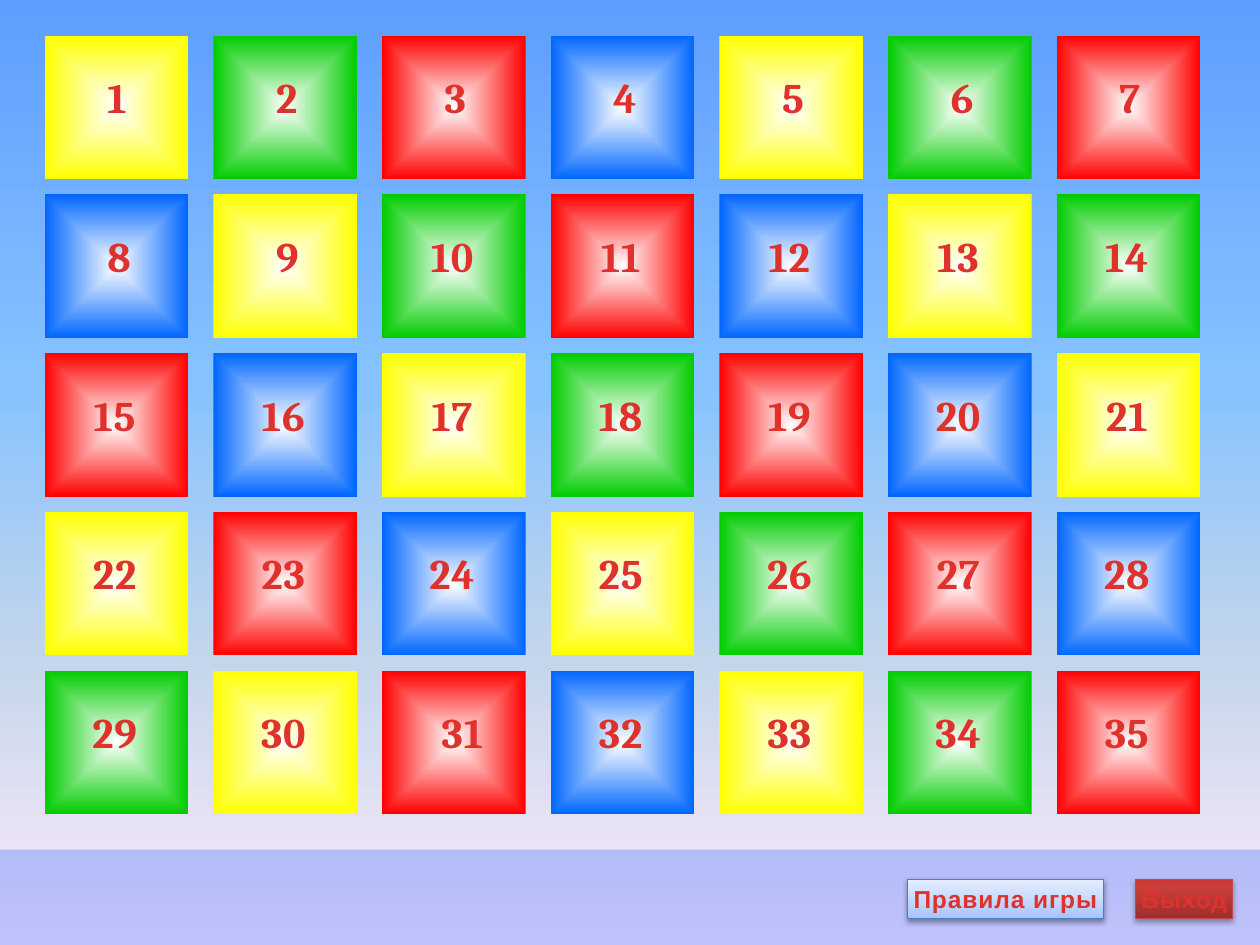
from lxml import etree
from pptx import Presentation
from pptx.dml.color import RGBColor
from pptx.enum.shapes import MSO_SHAPE
from pptx.enum.text import MSO_ANCHOR, PP_ALIGN
from pptx.oxml.ns import qn
from pptx.util import Pt

TILE_SHAPE = MSO_SHAPE.ACTION_BUTTON_CUSTOM
RECTANGLE = MSO_SHAPE.RECTANGLE
CENTER = PP_ALIGN.CENTER
TOP, MIDDLE = MSO_ANCHOR.TOP, MSO_ANCHOR.MIDDLE

COLORS = {
    "Y": "FFFF00", "G": "00CC00", "R": "FF0000", "B": "0066FF",
    "white": "FFFFFF", "bar": "3366FF", "shadow": "000000",
    "rules_line": "4B7EBC", "exit_line": "BF4C48",
}
SKY = [(0, "5E9EFF"), (40, "85C2FF"), (70, "C4D6EB"), (100, "FFEBFA")]
TEXT_RED = [(25, "E0322D"), (100, "A2201C")]
RULES_BLUE = [(0, "A4C4FF"), (35, "BFD4FF"), (100, "E6EEFF")]
EXIT_RED = [(0, "9C2F2D"), (80, "CB3E3A"), (100, "CE3B37")]

TILE_ROWS = ["YGRBYGR", "BYGRBYG", "RBYGRBY", "YRBYGRB", "GYRBYGR"]
TILE_SIZE = 82
NUMBER_SHIFTS = {31: 6}  # this number sits right of its tile's centre


def add_color(parent, color, alpha=None):
    node = etree.SubElement(parent, qn("a:srgbClr"), val=color)
    if alpha is not None:
        etree.SubElement(node, qn("a:alpha"), val=str(alpha * 1000))


def set_gradient(fill, holder, stops, angle=None):
    """Linear gradient at a clockwise angle, or rectangular from the centre."""
    fill.gradient()
    gradient = next(holder.iter(qn("a:gradFill")))
    for child in list(gradient):
        gradient.remove(child)
    stop_list = etree.SubElement(gradient, qn("a:gsLst"))
    for position, color in stops:
        stop = etree.SubElement(stop_list, qn("a:gs"), pos=str(position * 1000))
        add_color(stop, color)
    if angle is None:
        center = etree.SubElement(gradient, qn("a:path"), path="rect")
        etree.SubElement(center, qn("a:fillToRect"),
                         l="50000", t="50000", r="50000", b="50000")
    else:
        etree.SubElement(gradient, qn("a:lin"), ang=str(angle * 60000), scaled="0")


def write_label(shape, text, size, font_name, anchor):
    frame = shape.text_frame
    frame.word_wrap = False
    frame.vertical_anchor = anchor
    para = frame.paragraphs[0]
    para.alignment = CENTER
    para.font.size = Pt(size)
    para.font.name = font_name
    para.font.bold = True
    span = para.add_run()
    span.text = text
    properties = span._r.get_or_add_rPr()
    properties.set("spc", "50")
    set_gradient(span.font.fill, properties, TEXT_RED, 90)


def add_plain_shape(page, kind, left, top, width, height):
    shape = page.shapes.add_shape(kind, Pt(left), Pt(top), Pt(width), Pt(height))
    shape.shadow.inherit = False
    shape.line.fill.background()
    return shape


def add_tile(page, left, top, color, number):
    tile = add_plain_shape(page, TILE_SHAPE, left, top, TILE_SIZE, TILE_SIZE)
    set_gradient(tile.fill, tile._element.spPr,
                 [(0, COLORS["white"]), (100, color)])
    text = str(number)
    width = 22.5 * len(text)
    text_left = left + (TILE_SIZE - width) / 2 - 1 + NUMBER_SHIFTS.get(number, 0)
    box = page.shapes.add_textbox(Pt(text_left), Pt(top + 17), Pt(width), Pt(45))
    write_label(box, text, 24, "Cambria", TOP)


def add_board(page, left, top, column_step, row_step):
    for row, letters in enumerate(TILE_ROWS):
        for column, letter in enumerate(letters):
            number = row * len(letters) + column + 1
            add_tile(page, left + column * column_step, top + row * row_step,
                     COLORS[letter], number)


def add_button(page, left, top, width, text, stops, line, alpha, distance):
    button = add_plain_shape(page, RECTANGLE, left, top, width, 22.5)
    set_gradient(button.fill, button._element.spPr, stops, 270)
    button.line.color.rgb = RGBColor.from_string(line)
    button.line.width = Pt(0.75)
    effects = button._element.spPr.find(qn("a:effectLst"))
    shadow = etree.SubElement(effects, qn("a:outerShdw"),
                              blurRad=str(Pt(3.15)), dist=str(Pt(distance)),
                              dir="5400000", rotWithShape="0")
    add_color(shadow, COLORS["shadow"], alpha)
    write_label(button, text, 14, "Arial", MIDDLE)


def add_footer(page, left, top, width, height):
    bar = add_plain_shape(page, RECTANGLE, left, top, width, height)
    bar.fill.solid()
    bar.fill.fore_color.rgb = RGBColor.from_string(COLORS["bar"])
    bar_color = next(bar._element.spPr.iter(qn("a:srgbClr")))
    etree.SubElement(bar_color, qn("a:alpha"), val="31000")
    add_button(page, left + 518.5, top + 17, 112, "Правила игры",
               RULES_BLUE, COLORS["rules_line"], 38, 1.6)
    add_button(page, left + 649, top + 17, 55.5, "Выход",
               EXIT_RED, COLORS["exit_line"], 35, 1.8)


def main():
    deck = Presentation()
    deck.slide_width, deck.slide_height = Pt(720), Pt(540)
    page = deck.slides.add_slide(deck.slide_layouts[6])
    set_gradient(page.background.fill, page._element, SKY, 90)

    # Numbered tiles
    add_board(page, 25.5, 20.4, 96.4, 90.7)
    # Bar with the two buttons
    add_footer(page, 0, 485.5, 720, 54.5)

    deck.save("out.pptx")


if __name__ == "__main__":
    main()
